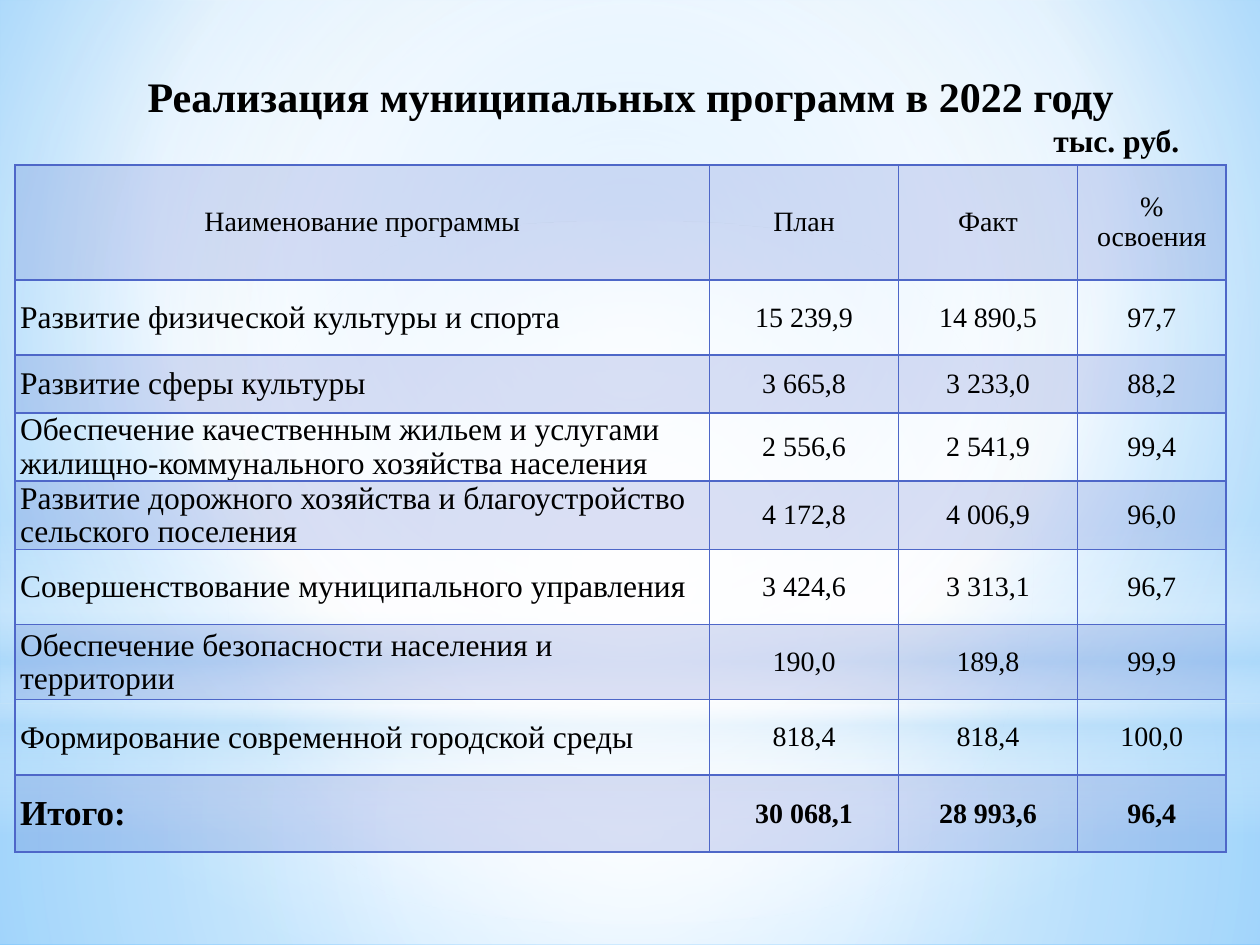
from lxml import etree
from pptx import Presentation
from pptx.dml.color import RGBColor
from pptx.enum.shapes import MSO_SHAPE
from pptx.enum.text import MSO_ANCHOR, MSO_AUTO_SIZE, PP_ALIGN
from pptx.oxml.ns import qn
from pptx.util import Pt

RECT, OVAL = MSO_SHAPE.RECTANGLE, MSO_SHAPE.OVAL
TOP, MIDDLE = MSO_ANCHOR.TOP, MSO_ANCHOR.MIDDLE
LEFT, CENTER, RIGHT = PP_ALIGN.LEFT, PP_ALIGN.CENTER, PP_ALIGN.RIGHT

FONT = "Times New Roman"
COLORS = {"text": "000000", "accent": "4E67C8", "white": "FFFFFF", "haze": "B4DCFA",
          "sky": "9ED5FF", "deep": "5BB9FF"}

TITLE_LINES = [("Реализация муниципальных программ в 2022 году", 24, CENTER),
               ("тыс. руб.", 18, RIGHT)]
HEADER = ("Наименование программы", "План", "Факт", "% освоения")
PROGRAMS = [
    ("Развитие физической культуры и спорта", "15 239,9", "14 890,5", "97,7"),
    ("Развитие сферы культуры", "3 665,8", "3 233,0", "88,2"),
    ("Обеспечение качественным жильем и услугами жилищно-коммунального хозяйства населения",
     "2 556,6", "2 541,9", "99,4"),
    ("Развитие дорожного хозяйства и благоустройство сельского поселения",
     "4 172,8", "4 006,9", "96,0"),
    ("Совершенствование муниципального управления", "3 424,6", "3 313,1", "96,7"),
    ("Обеспечение безопасности населения и территории", "190,0", "189,8", "99,9"),
    ("Формирование современной городской среды", "818,4", "818,4", "100,0"),
]
TOTAL = ("Итого:", "30 068,1", "28 993,6", "96,4")
COL_WIDTHS = [396.9, 108, 102.2, 85]
ROW_HEIGHTS = [65.6, 43, 33.1, 33.1, 36, 43, 43, 43, 44]

# Gradient stops: position, colour, opacity (all percentages)
BACKDROP = [(0, "sky", 100), (60, "white", 100), (100, "deep", 100)]
CENTRE = (50, 50, 50, 50)
# Shape, left, top, width, height, stops, focus (None for a vertical gradient)
GLOWS = [
    (RECT, 0, 402, 720, 138,
     [(0, "white", 91), (37, "white", 76), (100, "haze", 79)], CENTRE),
    (RECT, 0, 0, 720, 402,
     [(0, "white", 89), (48, "white", 62), (100, "haze", 79)], CENTRE),
    (RECT, 0, 297, 720, 180,
     [(0, "white", 0), (29, "white", 30), (45, "haze", 40), (55, "white", 26),
      (65, "haze", 60), (100, "white", 0)], None),
    (OVAL, 0, 126, 720, 402, [(0, "white", 100), (56, "white", 0)], CENTRE),
]


def add_color(parent, name, opacity):
    color = etree.SubElement(parent, qn("a:srgbClr"), val=COLORS[name])
    if opacity < 100:
        etree.SubElement(color, qn("a:alpha"), val=str(opacity * 1000))


def set_gradient(owner, stops, focus):
    """Rewrite the first gradient fill found inside the element owner."""
    grad = owner.find(".//" + qn("a:gradFill"))
    for child in list(grad):
        grad.remove(child)
    gs_list = etree.SubElement(grad, qn("a:gsLst"))
    for position, name, opacity in stops:
        stop = etree.SubElement(gs_list, qn("a:gs"), pos=str(position * 1000))
        add_color(stop, name, opacity)
    if focus:
        circle = etree.SubElement(grad, qn("a:path"), path="circle")
        sides = {side: str(v * 1000) for side, v in zip("ltrb", focus)}
        etree.SubElement(circle, qn("a:fillToRect"), **sides)
    else:
        etree.SubElement(grad, qn("a:lin"), ang="5400000", scaled="0")


def add_run(p, text, size, bold, align):
    p.alignment = align
    r = p.add_run()
    r.text = text
    r.font.name, r.font.size, r.font.bold = FONT, Pt(size), bold
    r.font.color.rgb = RGBColor.from_string(COLORS["text"])


def set_margins(box, left, top, right, bottom):
    box.margin_left, box.margin_top = Pt(left), Pt(top)
    box.margin_right, box.margin_bottom = Pt(right), Pt(bottom)


def style_cell(cell, shaded):
    tc_pr = cell._tc.get_or_add_tcPr()
    for side in "LRTB":
        line = etree.SubElement(tc_pr, qn("a:ln" + side), w=str(Pt(1)))
        add_color(etree.SubElement(line, qn("a:solidFill")), "accent", 100)
    if shaded:
        add_color(etree.SubElement(tc_pr, qn("a:solidFill")), "accent", 20)
    else:
        cell.fill.background()


prs = Presentation()
prs.slide_width, prs.slide_height = Pt(720), Pt(540)
s = prs.slides.add_slide(prs.slide_layouts[5])
s.background.fill.gradient()
set_gradient(s._element, BACKDROP, (20, 10, 20, 60))

for kind, left, top, width, height, stops, focus in GLOWS:
    sp = s.shapes.add_shape(kind, Pt(left), Pt(top), Pt(width), Pt(height))
    sp.shadow.inherit = False
    sp.line.fill.background()
    sp.fill.gradient()
    set_gradient(sp._element, stops, focus)

title = s.shapes.title
s.shapes._spTree.append(title._element)  # bring in front of the glows
title.left, title.top, title.width, title.height = Pt(39.6), Pt(33.8), Pt(641.5), Pt(33.8)
tf = title.text_frame
tf.word_wrap, tf.auto_size, tf.vertical_anchor = True, MSO_AUTO_SIZE.NONE, TOP
set_margins(tf, 7.2, 6.5, 7.2, 3.6)
for i, (text, size, align) in enumerate(TITLE_LINES):
    p = tf.add_paragraph() if i else tf.paragraphs[0]
    p.space_before = Pt(0)
    add_run(p, text, size, True, align)

rows = [HEADER, *PROGRAMS, TOTAL]
table = s.shapes.add_table(len(rows), len(HEADER), Pt(8.6), Pt(94.3),
                           Pt(sum(COL_WIDTHS)), Pt(sum(ROW_HEIGHTS))).table
table.first_row = table.horz_banding = False
for column, width in zip(table.columns, COL_WIDTHS):
    column.width = Pt(width)
for i, (values, height) in enumerate(zip(rows, ROW_HEIGHTS)):
    table.rows[i].height = Pt(height)
    is_header, is_total = i == 0, i == len(rows) - 1
    for j, text in enumerate(values):
        cell = table.cell(i, j)
        is_name = j == 0 and not is_header
        style_cell(cell, shaded=i % 2 == 0)
        cell.vertical_anchor = MIDDLE
        if is_header:
            set_margins(cell, 7.2, 3.6, 7.2, 3.6)
        else:
            set_margins(cell, 2.9 if is_name else 0.7, 0.7, 0.7, 0)
        size = (20 if is_total else 18) if is_name else 16
        p = cell.text_frame.paragraphs[0]
        p.line_spacing = 0.96
        add_run(p, text, size, is_total, LEFT if is_name else CENTER)

prs.save("out.pptx")
